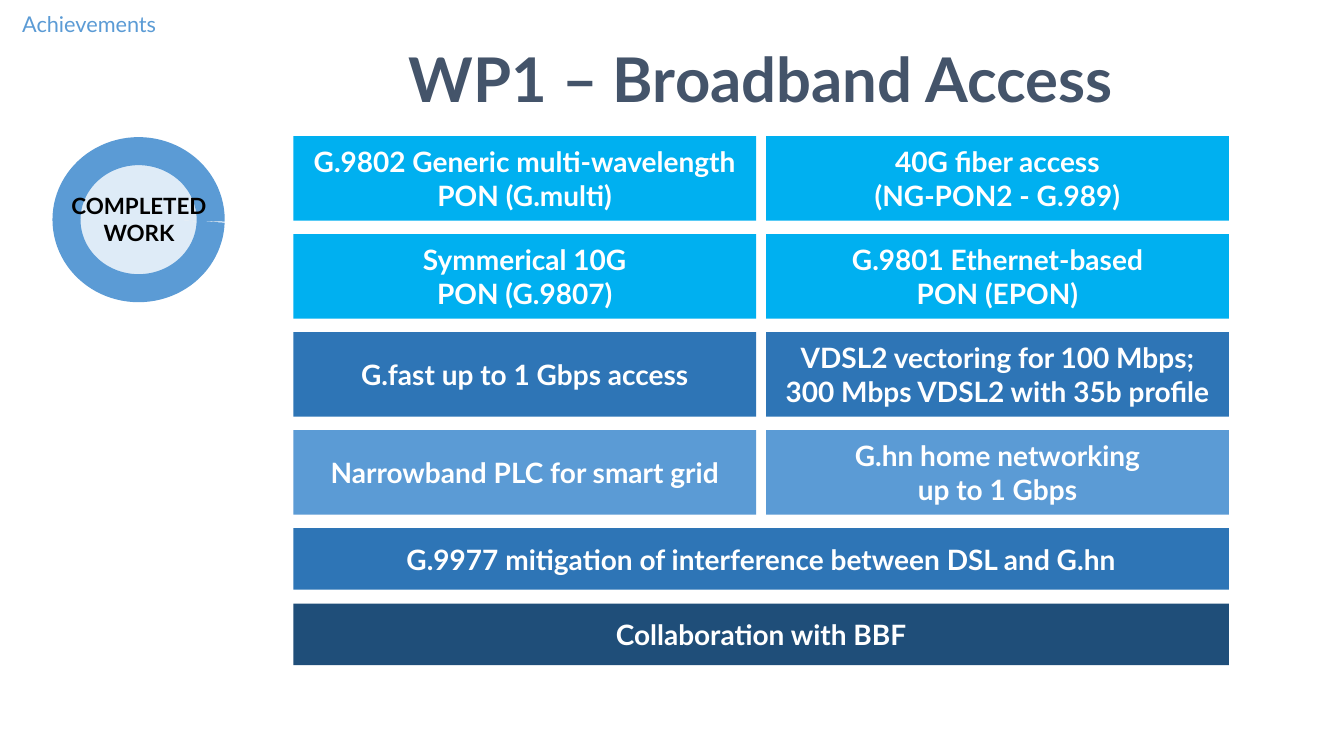
from dataclasses import dataclass

from lxml.etree import _Element
from pptx import Presentation
from pptx.dml.color import RGBColor
from pptx.enum.shapes import MSO_SHAPE
from pptx.enum.text import MSO_ANCHOR, PP_ALIGN
from pptx.shapes.autoshape import Shape
from pptx.slide import Slide
from pptx.util import Pt

FONT_NAME = "Lato"
GRID_LEFT, GRID_TOP = 209.5, 97.2
COLUMN_WIDTH, COLUMN_PITCH = 330.7, 337.7
ROW_HEIGHT, ROW_PITCH = 60.5, 70
BAR_HEIGHT, BAR_PITCH = 44, 54
CYAN, BLUE, LIGHT_BLUE, NAVY = "00B0F0", "2E75B6", "5B9BD5", "1F4E79"


@dataclass(frozen=True)
class Box:
    left: float
    top: float
    width: float
    height: float

    def lengths(self) -> tuple[Pt, Pt, Pt, Pt]:
        return Pt(self.left), Pt(self.top), Pt(self.width), Pt(self.height)


@dataclass(frozen=True)
class TextStyle:
    size: float
    color: str
    bold: bool = True
    wrap: bool = False
    anchor: MSO_ANCHOR = MSO_ANCHOR.TOP
    margin_x: float = 5
    margin_y: float = 2
    line_spacing: float = 1.0


@dataclass(frozen=True)
class Label:
    text: str
    box: Box
    style: TextStyle


@dataclass(frozen=True)
class Tile:
    text: str
    fill: str


TILE_STYLE = TextStyle(20, "FFFFFF", anchor=MSO_ANCHOR.MIDDLE)

TILE_ROWS = [
    (Tile("G.9802 Generic multi-wavelength\nPON (G.multi)", CYAN),
     Tile("40G fiber access\n(NG-PON2 - G.989)", CYAN)),
    (Tile("Symmerical 10G\nPON (G.9807)", CYAN),
     Tile("G.9801 Ethernet-based\nPON (EPON)", CYAN)),
    (Tile("G.fast up to 1 Gbps access", BLUE),
     Tile("VDSL2 vectoring for 100 Mbps;\v300 Mbps VDSL2 with 35b profile", BLUE)),
    (Tile("Narrowband PLC for smart grid", LIGHT_BLUE),
     Tile("G.hn home networking\nup to 1 Gbps", LIGHT_BLUE)),
]

BARS = [
    Tile("G.9977 mitigation of interference between DSL and G.hn", BLUE),
    Tile("Collaboration with BBF", NAVY),
]

LABELS = [
    Label("COMPLETED\vWORK", Box(41, 134, 116.6, 46),
          TextStyle(16, "000000", wrap=True, margin_x=7.2, margin_y=3.6)),
    Label("WP1 – Broadband Access", Box(266.4, 27.4, 554.4, 56.9),
          TextStyle(44, "44546A", margin_x=3.6, margin_y=1.5)),
    Label("Achievements", Box(0, 0, 127.4, 31.7),
          TextStyle(15.5, LIGHT_BLUE, bold=False, wrap=True,
                    margin_x=8.6, margin_y=4.3, line_spacing=1.2)),
]


def color(value: str) -> RGBColor:
    return RGBColor.from_string(value)


def apply_format(target: object, values: dict[str, object]) -> None:
    for name, value in values.items():
        setattr(target, name, value)


def write_text(shape: Shape, text: str, style: TextStyle) -> None:
    frame = shape.text_frame
    frame.text = text
    apply_format(frame, {
        "word_wrap": style.wrap,
        "vertical_anchor": style.anchor,
        "margin_left": Pt(style.margin_x),
        "margin_right": Pt(style.margin_x),
        "margin_top": Pt(style.margin_y),
        "margin_bottom": Pt(style.margin_y),
    })
    for paragraph in frame.paragraphs:
        apply_format(paragraph, {
            "alignment": PP_ALIGN.CENTER,
            "line_spacing": style.line_spacing,
        })
        for run in paragraph.runs:
            apply_format(run.font, {
                "name": FONT_NAME,
                "size": Pt(style.size),
                "bold": style.bold,
            })
            run.font.color.rgb = color(style.color)


def add_filled_shape(slide: Slide, kind: MSO_SHAPE, box: Box, fill: str) -> Shape:
    shape = slide.shapes.add_shape(kind, *box.lengths())
    shape.shadow.inherit = False
    shape.fill.solid()
    shape.fill.fore_color.rgb = color(fill)
    shape.line.fill.background()
    return shape


def add_tile(slide: Slide, tile: Tile, box: Box) -> None:
    shape = add_filled_shape(slide, MSO_SHAPE.RECTANGLE, box, tile.fill)
    write_text(shape, tile.text, TILE_STYLE)


def add_label(slide: Slide, label: Label) -> None:
    shape = slide.shapes.add_textbox(*label.box.lengths())
    write_text(shape, label.text, label.style)


def add_progress_ring(slide: Slide) -> None:
    add_filled_shape(slide, MSO_SHAPE.OVAL, Box(43.9, 104.4, 111.6, 105.8), "F2F2F2")
    ring = add_filled_shape(slide, MSO_SHAPE.ARC, Box(47.5, 108, 103, 97.9), "DEEBF7")
    ring.adjustments[0] = 1
    ring.adjustments[1] = 0.73
    ring.line.color.rgb = color(LIGHT_BLUE)
    ring.line.width = Pt(20)


def add_tiles(slide: Slide) -> None:
    for row, tiles in enumerate(TILE_ROWS):
        for column, tile in enumerate(tiles):
            add_tile(slide, tile, Box(GRID_LEFT + column * COLUMN_PITCH,
                                      GRID_TOP + row * ROW_PITCH,
                                      COLUMN_WIDTH, ROW_HEIGHT))
    bars_top = GRID_TOP + len(TILE_ROWS) * ROW_PITCH
    for index, bar in enumerate(BARS):
        add_tile(slide, bar, Box(GRID_LEFT, bars_top + index * BAR_PITCH,
                                 COLUMN_PITCH + COLUMN_WIDTH, BAR_HEIGHT))


def main() -> None:
    presentation = Presentation()
    presentation.slide_width = Pt(960)
    presentation.slide_height = Pt(540)
    slide = presentation.slides.add_slide(presentation.slide_layouts[6])
    add_progress_ring(slide)
    for label in LABELS:
        add_label(slide, label)
    add_tiles(slide)
    presentation.save("out.pptx")


if __name__ == "__main__":
    main()
